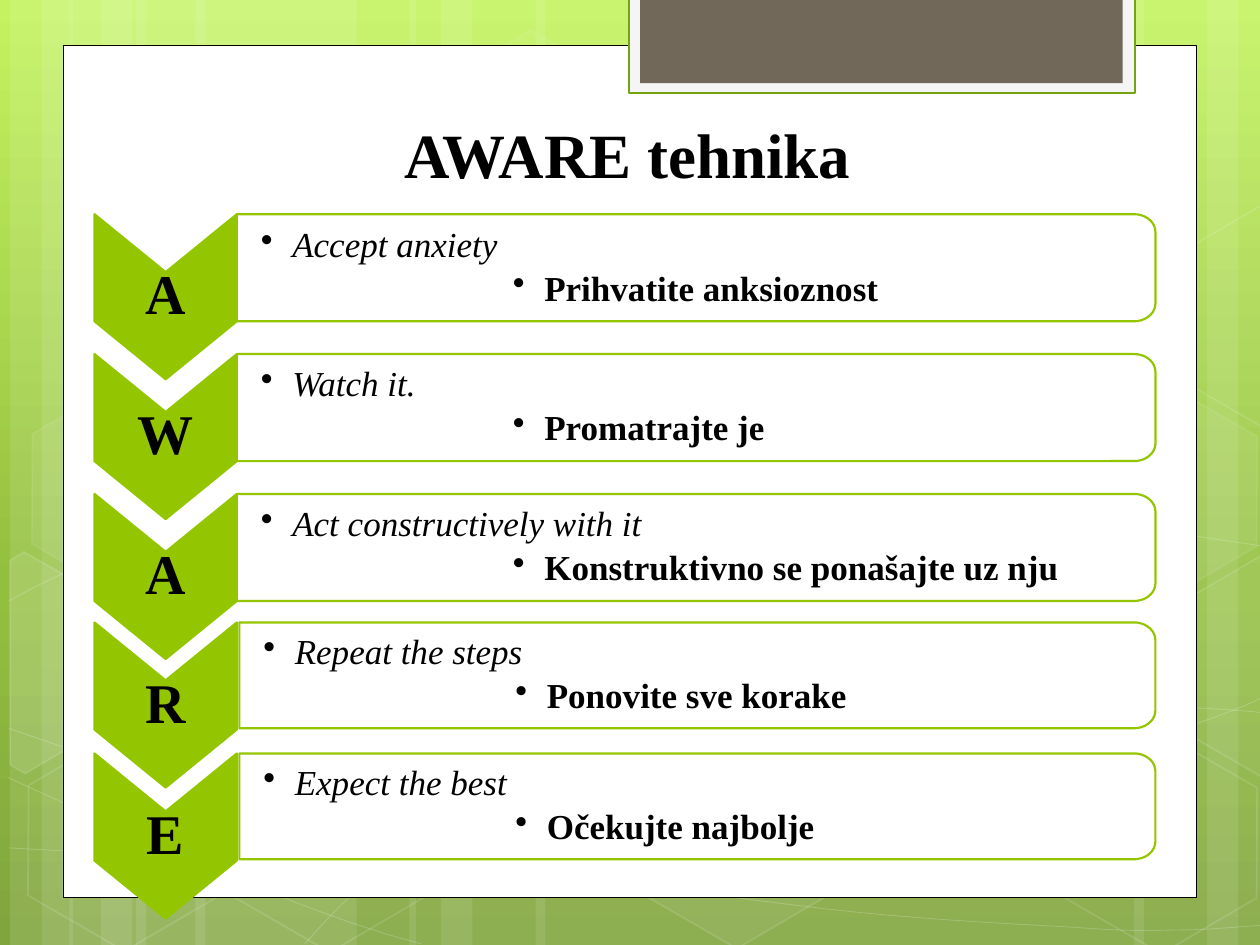
import copy
import math

import pptx
import pptx.dml.color
import pptx.enum.shapes
import pptx.enum.text
import pptx.oxml
import pptx.oxml.ns
import pptx.util

SHAPE = pptx.enum.shapes.MSO_SHAPE
ALIGN = pptx.enum.text.PP_ALIGN
ANCHOR = pptx.enum.text.MSO_ANCHOR
inches = pptx.util.Inches
qn = pptx.oxml.ns.qn

WIDTH, HEIGHT = 10, 7.5
FONT = "Times New Roman"
GREEN, WHITE, BLACK = "94C600", "FFFFFF", "000000"
TITLE = "AWARE tehnika"

# letter, English step, Croatian step, top, left edge of panel, panel height
STEPS = [
    ("A", "Accept anxiety", "Prihvatite anksioznost", 1.70, 1.88, 0.85),
    ("W", "Watch it.", "Promatrajte je", 2.81, 1.88, 0.85),
    ("A", "Act constructively with it", "Konstruktivno se ponašajte uz nju", 3.92, 1.88, 0.85),
    ("R", "Repeat the steps", "Ponovite sve korake", 4.94, 1.90, 0.84),
    ("E", "Expect the best", "Očekujte najbolje", 5.98, 1.90, 0.84),
]
CHEVRON_LEFT, CHEVRON_WIDTH, CHEVRON_SIDE, CHEVRON_NOTCH = 0.75, 1.13, 0.85, 0.46
PANEL_RIGHT, CORNER_X, CORNER_Y = 9.17, 0.17, 0.14

GRADIENT = [(0, "C3F35F"), (0.62, "93BF3F"), (1, "81A53E")]
STRIPES = [  # left, width
    (1.08, 1.75), (0.08, 0.5), (0.33, 0.83), (1.55, 1.75), (0.55, 0.5), (0.8, 0.83),
    (7.33, 1.75), (9.58, 0.5), (9, 0.83), (4.25, 3.08), (3.25, 0.5), (3.5, 0.83),
]
CURVES = [  # start point, then three points for each Bezier segment
    [(0.07, 6.73), (0.61, 6.76), (1.15, 6.79), (1.9, 6.78), (2.65, 6.77), (3.58, 6.75),
     (4.58, 6.65), (5.58, 6.55), (7, 6.36), (7.92, 6.17), (8.83, 5.98), (9.77, 5.68), (10.07, 5.51)],
    [(0.07, 4.77), (0.36, 4.61), (0.65, 4.46), (1.21, 4.31), (1.78, 4.16), (2.59, 3.94),
     (3.47, 3.87), (4.36, 3.8), (5.44, 3.79), (6.54, 3.87), (7.64, 3.95), (9.47, 4.26), (10.07, 4.34)],
    [(0.06, 6.17), (1.27, 6.72), (2.47, 7.27), (3.34, 7.49)],
    [(0.07, 5.78), (0.38, 5.89), (0.7, 6), (1.28, 6.16), (1.86, 6.31), (2.73, 6.56), (3.57, 6.73),
     (4.4, 6.9), (5.45, 7.08), (6.28, 7.18), (7.11, 7.29), (8, 7.33), (8.53, 7.36),
     (9.05, 7.4), (9.19, 7.38), (9.45, 7.38), (9.71, 7.37), (9.89, 7.35), (10.07, 7.34)],
    [(2.42, 7.49), (2.6, 7.29), (2.78, 7.09), (3.02, 6.91), (3.26, 6.73), (3.6, 6.53), (3.88, 6.39),
     (4.16, 6.25), (4.33, 6.19), (4.7, 6.09), (5.06, 5.99), (5.73, 5.85), (6.08, 5.78),
     (6.44, 5.71), (6.49, 5.71), (6.8, 5.69), (7.11, 5.66), (7.6, 5.63), (7.94, 5.62),
     (8.29, 5.61), (8.86, 5.62), (9.53, 5.62), (9.71, 5.63), (9.88, 5.64), (10.06, 5.66)],
]
HEXAGONS = [  # left, top, fill opacity (0 for none), line opacity
    (3.34, 0.36, 4, 8), (4.97, 5.89, 6, 12), (0.11, 5.91, 0, 12), (0.14, 3.12, 7, 8),
    (1.74, 5.92, 0, 12), (7.53, 4.53, 10, 12), (8.34, 5.93, 0, 12), (8.34, 3.14, 7, 8),
]
CUT_HEXAGONS = [  # corners, fill opacity
    ([(0.08, 4.45), (0.19, 4.38), (0.96, 4.82), (0.95, 5.7), (0.2, 6.14), (0.08, 6.07)], 10),
    ([(9.26, 4.85), (10.01, 4.41), (10.09, 4.46), (10.09, 6.13), (10.02, 6.17), (9.26, 5.73)], 4),
    ([(9.26, 2.07), (10.01, 1.63), (10.1, 1.68), (10.09, 3.35), (10.02, 3.39), (9.26, 2.95)], 0),
]
FRAMES = [  # left, top, width, height, fill, line, line width
    (0.5, 0.36, 9, 6.76, WHITE, BLACK, 0.5),
    (4.99, -0.02, 4.02, 0.76, "F5F5F5", "74A510", 1.25),
    (5.08, -0.02, 3.83, 0.68, "71685A", None, 0),
]


def color(value):
    return pptx.dml.color.RGBColor.from_string(value)


def style(shape, fill=None, line=None, width=1, fill_opacity=100, line_opacity=100):
    """Set fill, line and their opacities in percent; None means no fill or line."""
    shape.shadow.inherit = False
    for paint, value in ((shape.fill, fill), (shape.line.fill, line)):
        if value:
            paint.solid()
            paint.fore_color.rgb = color(value)
        else:
            paint.background()
    if line:
        shape.line.width = pptx.util.Pt(width)
    for parent, opacity in (("", fill_opacity), ("a:ln/", line_opacity)):
        tint = shape.element.spPr.find(
            f"{parent}a:solidFill/a:srgbClr", {"a": pptx.oxml.ns.nsdecls("a").split('"')[1]})
        if tint is not None and opacity < 100:
            tint.append(pptx.oxml.parse_xml(
                f'<a:alpha {pptx.oxml.ns.nsdecls("a")} val="{opacity * 1000}"/>'))


def add_preset(page, kind, left, top, width, height):
    return page.shapes.add_shape(kind, inches(left), inches(top), inches(width), inches(height))


def add_outline(page, points, close=True):
    start, *rest = [(inches(x), inches(y)) for x, y in points]
    builder = page.shapes.build_freeform(*start)
    builder.add_line_segments(rest, close=close)
    return builder.convert_to_shape()


def bezier_points(points, parts=10):
    result = [points[0]]
    for first in range(0, len(points) - 1, 3):
        knots = points[first:first + 4]
        for part in range(1, parts + 1):
            t = part / parts
            weights = [math.comb(3, n) * t ** n * (1 - t) ** (3 - n) for n in range(4)]
            result.append(tuple(sum(w * knot[axis] for w, knot in zip(weights, knots))
                                for axis in (0, 1)))
    return result


def set_font(para, size, bold=False, italic=False):
    font = para.font
    font.name, font.size, font.bold, font.italic = FONT, pptx.util.Pt(size), bold, italic
    font.color.rgb = color(BLACK)


def set_frame(shape, left, top, right, bottom):
    frame = shape.text_frame
    frame.word_wrap = True
    frame.vertical_anchor = ANCHOR.MIDDLE
    frame.margin_left, frame.margin_top = inches(left), inches(top)
    frame.margin_right, frame.margin_bottom = inches(right), inches(bottom)
    return frame


def add_backdrop(page):
    fill = page.background.fill
    fill.gradient()
    fill.gradient_angle = 270
    first = next(page.element.iter(qn("a:gs")))
    first.addnext(copy.deepcopy(first))
    for stop, (position, value) in zip(fill.gradient_stops, GRADIENT):
        stop.position = position
        stop.color.rgb = color(value)
    for left, width in STRIPES:
        style(add_preset(page, SHAPE.RECTANGLE, left, 0, width, HEIGHT), WHITE, fill_opacity=10)
    for points in CURVES:
        style(add_outline(page, bezier_points(points), close=False),
              line=WHITE, width=0.5, line_opacity=20)
    for left, top, opacity, line_opacity in HEXAGONS:
        hexagon = add_preset(page, SHAPE.HEXAGON, left, top, 1.75, 1.52)
        hexagon.adjustments[0] = 0.285
        hexagon.rotation = 30
        style(hexagon, WHITE if opacity else None, WHITE, 1, opacity, line_opacity)
    for points, opacity in CUT_HEXAGONS:
        style(add_outline(page, points), WHITE if opacity else None, WHITE, 1, opacity, 12)
    for *place, fill_color, line, width in FRAMES:
        style(add_preset(page, SHAPE.RECTANGLE, *place), fill_color, line, width)


def add_chevron(page, letter, top):
    left, middle, right = (CHEVRON_LEFT + CHEVRON_WIDTH * share for share in (0, 0.5, 1))
    side = top + CHEVRON_SIDE
    chevron = add_outline(page, [
        (right, top), (right, side), (middle, side + CHEVRON_NOTCH),
        (left, side), (left, top), (middle, top + CHEVRON_NOTCH)])
    style(chevron, GREEN, GREEN, 1.25)
    para = set_frame(chevron, 0.02, 0.52, 0.02, 0.52).paragraphs[0]
    para.text, para.alignment, para.line_spacing = letter, ALIGN.CENTER, 0.9
    set_font(para, 32, bold=True)


def add_panel(page, english, croatian, top, left, height):
    angles = [math.radians(degrees) for degrees in range(0, 91, 10)]
    upper = [(PANEL_RIGHT - CORNER_X * (1 - math.sin(angle)),
              top + CORNER_Y * (1 - math.cos(angle))) for angle in angles]
    lower = [(x, 2 * top + height - y) for x, y in reversed(upper)]
    panel = add_outline(page, [(left, top), *upper, *lower, (left, top + height)])
    style(panel, WHITE, GREEN, 1.25, fill_opacity=90)
    frame = set_frame(panel, 0.19, 0.06, 0.06, 0.06)
    lines = [(english, 1, 0.25, False), (croatian, 5, 2.25, True)]
    for para, (text, level, indent, bold) in zip((frame.paragraphs[0], frame.add_paragraph()), lines):
        para.text, para.level, para.alignment = text, level, ALIGN.LEFT
        para.line_spacing, para.space_after = 0.9, pptx.util.Pt(3.5)
        set_font(para, 20, bold=bold, italic=not bold)
        properties = para._p.get_or_add_pPr()
        properties.set("marL", str(inches(indent)))
        properties.set("indent", str(inches(-0.25)))
        bullet = pptx.oxml.parse_xml(f'<a:buChar {pptx.oxml.ns.nsdecls("a")} char="•"/>')
        properties.find(qn("a:spcAft")).addnext(bullet)


def add_title(page):
    title = page.shapes.title
    title.element.getparent().append(title.element)  # in front of the backdrop
    title.left, title.top, title.width, title.height = map(inches, (1.14, 0.76, 7.68, 0.81))
    title.text_frame.text = TITLE
    title.text_frame.vertical_anchor = ANCHOR.BOTTOM
    para = title.text_frame.paragraphs[0]
    para.alignment = ALIGN.CENTER
    set_font(para, 36, bold=True)


def main():
    deck = pptx.Presentation()
    deck.slide_width, deck.slide_height = inches(WIDTH), inches(HEIGHT)
    page = deck.slides.add_slide(deck.slide_layouts[5])
    add_backdrop(page)
    add_title(page)
    for letter, english, croatian, top, left, height in STEPS:
        add_chevron(page, letter, top)
        add_panel(page, english, croatian, top, left, height)
    deck.save("out.pptx")


if __name__ == "__main__":
    main()
